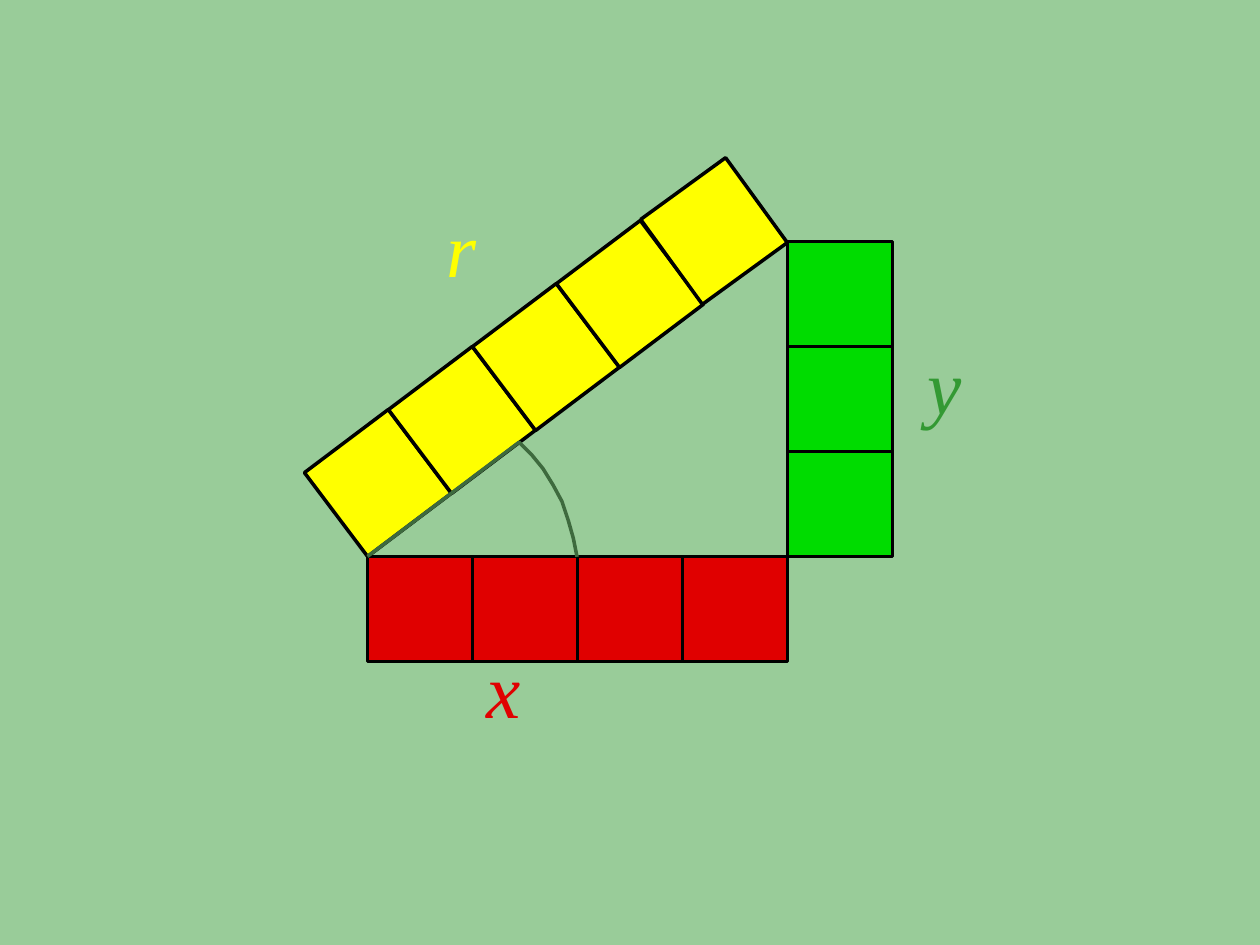
from typing import NamedTuple

from lxml.etree import SubElement as Sub
from pptx import Presentation
from pptx.dml.color import RGBColor as Rgb
from pptx.enum.shapes import MSO_SHAPE as Kind
from pptx.enum.text import MSO_ANCHOR as Anchor, PP_ALIGN as Align
from pptx.oxml.ns import qn
from pptx.util import Inches, Pt

UNIT = 5 / 6
COLORS = {
    "back": "99CC99", "red": "E00000", "green": "00DC00", "yellow": "FFFF00",
    "leaf": "339933", "arc": "3E6A3E", "edge": "000000", "shade": "71A071",
}


class Strip(NamedTuple):
    col: float
    row: float
    right: float
    down: float
    turns: tuple[int, ...]
    color: str


class Label(NamedTuple):
    text: str
    col: float
    row: float
    color: str


STRIPS = [
    Strip(3.5, 5.3, 1, 0, (0,) * 4, "red"),
    Strip(7.5, 4.3, 0, -1, (0,) * 3, "green"),
    Strip(3.1, 4.1, 0.8, -0.6, (323,) * 4 + (324,), "yellow"),
]
LABELS = [
    Label("x", 4.5, 6.1, "red"),
    Label("r", 4.1, 1.9, "yellow"),
    Label("y", 8.7, 3.2, "leaf"),
]
ARC = [
    (4.12, 3.51), (4.22, 3.61), (4.31, 3.72), (4.39, 3.85),
    (4.46, 3.98), (4.51, 4.13), (4.55, 4.27), (4.58, 4.42),
]


def tint(name: str) -> Rgb:
    return Rgb.from_string(COLORS[name])


def grid(count: float) -> int:
    return Inches(count * UNIT)


def edge(shape, color: str) -> None:
    shape.shadow.inherit = False
    shape.line.color.rgb = tint(color)
    shape.line.width = Pt(2)


def draw_strip(shapes, strip: Strip) -> None:
    for step, turn in enumerate(strip.turns):
        left = grid(strip.col + step * strip.right)
        top = grid(strip.row + step * strip.down)
        tile = shapes.add_shape(Kind.RECTANGLE, left, top, grid(1), grid(1))
        tile.rotation = turn
        tile.fill.solid()
        tile.fill.fore_color.rgb = tint(strip.color)
        edge(tile, "edge")


def draw_label(shapes, label: Label) -> None:
    box = shapes.add_textbox(grid(label.col), grid(label.row), grid(0.6), grid(0.9))
    frame = box.text_frame
    frame.word_wrap = False
    frame.vertical_anchor = Anchor.MIDDLE
    para = frame.paragraphs[0]
    para.alignment = Align.CENTER
    run = para.add_run()
    run.text = label.text
    font = para.font
    font.name = "Times New Roman"
    font.size = Pt(44)
    font.italic = True
    font.color.rgb = tint(label.color)
    props = run.font._element
    glow = Sub(Sub(props, qn("a:effectLst")), qn("a:outerShdw"), dist="38100", dir="2700000")
    Sub(glow, qn("a:srgbClr"), val=COLORS["shade"])


def draw_arc(shapes) -> None:
    pen = shapes.build_freeform(grid(3.5), grid(5.3))
    pen.add_line_segments([(Inches(x), Inches(y)) for x, y in ARC], close=False)
    arc = pen.convert_to_shape()
    arc.fill.background()
    edge(arc, "arc")


def main() -> None:
    deck = Presentation()
    deck.slide_width, deck.slide_height = grid(12), grid(9)
    slide = deck.slides.add_slide(deck.slide_layouts[6])
    fill = slide.background.fill
    fill.solid()
    fill.fore_color.rgb = tint("back")
    for strip in STRIPS:
        draw_strip(slide.shapes, strip)
    for label in LABELS:
        draw_label(slide.shapes, label)
    draw_arc(slide.shapes)
    deck.save("out.pptx")


if __name__ == "__main__":
    main()
